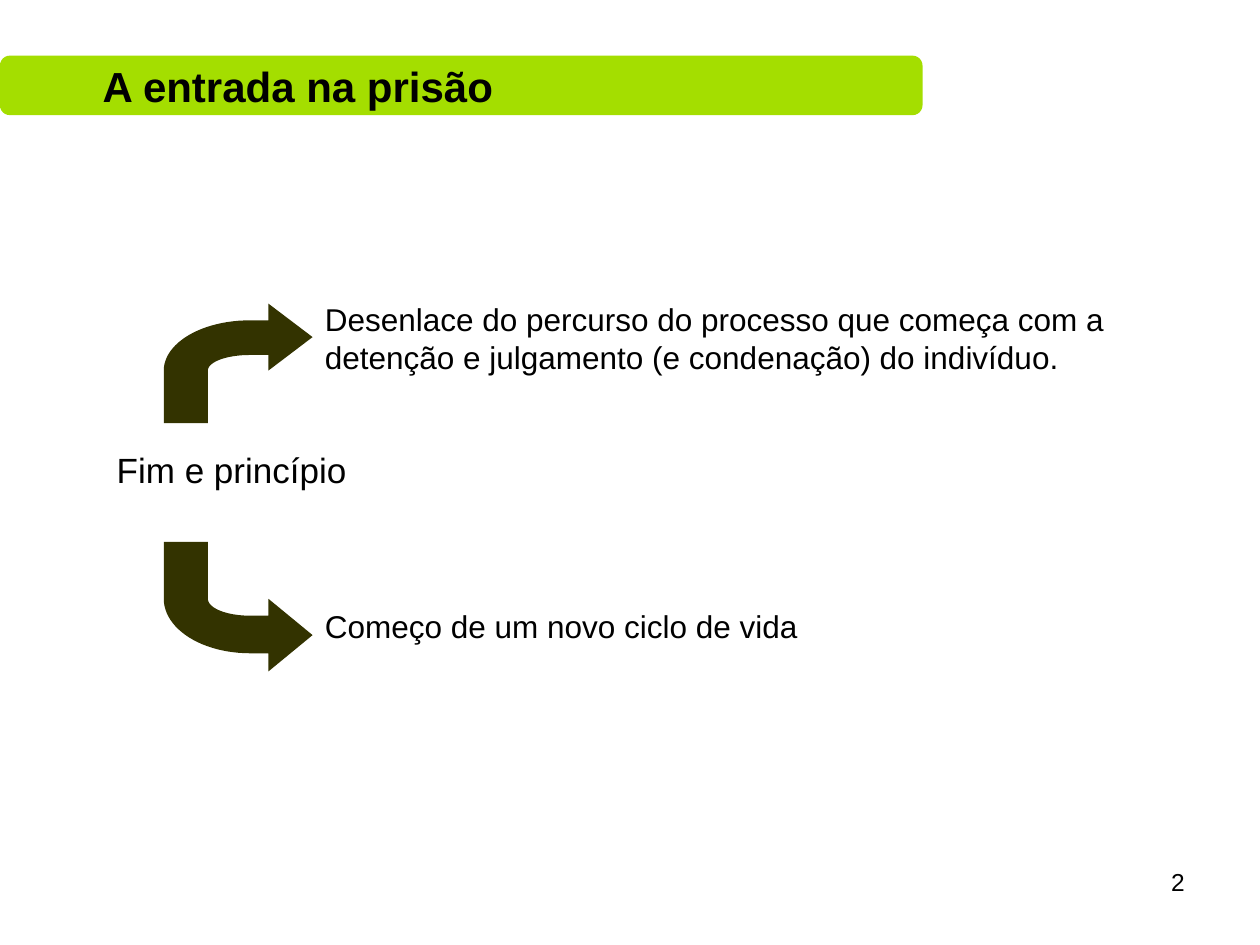
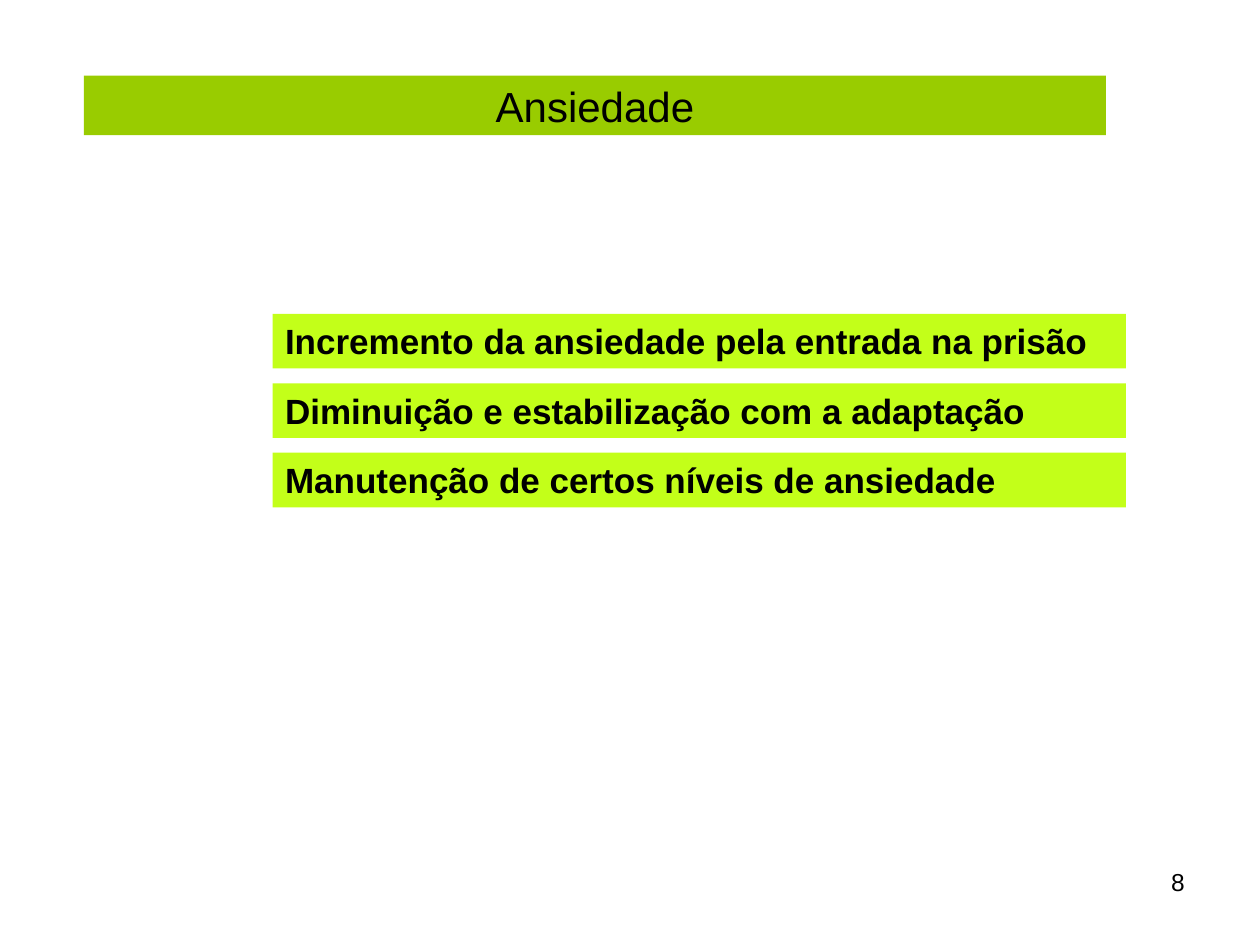
"""Build two slides about entering prison and the anxiety it brings."""
from math import cos, pi, sin

from pptx import Presentation
from pptx.dml.color import RGBColor
from pptx.enum.shapes import MSO_SHAPE as Shape
from pptx.enum.text import MSO_ANCHOR as Anchor, PP_ALIGN as Align
from pptx.util import Pt

FONT, INK, ARROW = "Arial", "000000", "333300"
LIME, GREEN, PALE = "A4DE00", "99CC00", "C3FF19"
TITLE_SIZE, TITLE_HEIGHT, INSET = 24, 34, 7.2

ENTRY = {
    "title": "A entrada na prisão",
    "page": "2",
    "hub": "Fim e princípio",
    "outcomes": [
        ("Desenlace do percurso do processo que começa com a detenção "
         "e julgamento (e condenação) do indivíduo.", (178.6, 168, 476, 50.4)),
        ("Começo de um novo ciclo de vida", (178.6, 343.4, 391, 29)),
    ],
    "arrows": [(241.8, 68.3), (309.6, -74.1)],
}
ANXIETY = {
    "title": "Ansiedade",
    "page": "8",
    "stages": [
        "Incremento da ansiedade pela entrada na prisão",
        "Diminuição e estabilização com a adaptação",
        "Manutenção de certos níveis de ansiedade",
    ],
}


def paint(shape, color):
    shape.shadow.inherit = False
    shape.fill.solid()
    shape.fill.fore_color.rgb = RGBColor.from_string(color)
    shape.line.fill.background()


def write(shape, text, size, bold=False, align=Align.LEFT, anchor=Anchor.TOP, left=INSET):
    frame = shape.text_frame
    frame.word_wrap = True
    frame.vertical_anchor = anchor
    frame.margin_left = Pt(left)
    line = frame.paragraphs[0]
    line.text = text
    line.alignment = align
    line.font.name, line.font.size, line.font.bold = FONT, Pt(size), bold
    line.font.color.rgb = RGBColor.from_string(INK)


def add_label(slide, box, text, size, **style):
    write(slide.shapes.add_textbox(*map(Pt, box)), text, size, **style)


def add_band(slide, box, color, text, size, kind=Shape.RECTANGLE, **style):
    band = slide.shapes.add_shape(kind, *map(Pt, box))
    paint(band, color)
    write(band, text, size, **style)


def add_bent_arrow(slide, foot, rise, left=93.6, width=85, stem=25.2, steps=24):
    """Draw an arrow that leaves its foot vertically and bends right; a negative rise goes down."""
    bend, head = left + 49, left + 59.8
    outer, tip, inner, base = 0.14, 0.28, 0.43, 0.56

    def curve(start, edge):
        angles = [pi / 2 * step / steps for step in range(steps + 1)]
        return [(bend - (bend - start) * sin(a), base - (base - edge) * cos(a)) for a in angles]

    outline = [
        (left + width, tip), (head, 0), (head, outer),
        *curve(left, outer), (left, 1), (left + stem, 1),
        *reversed(curve(left + stem, inner)), (head, inner), (head, base),
    ]
    points = [(Pt(x), Pt(foot - rise * (1 - depth))) for x, depth in outline]
    builder = slide.shapes.build_freeform(*points[0], scale=1.0)
    builder.add_line_segments(points[1:], close=True)
    paint(builder.convert_to_shape(), ARROW)


def new_slide(deck, page):
    slide = deck.slides.add_slide(deck.slide_layouts[6])
    add_label(slide, (516, 492, 168, 37.5), page, 14, align=Align.RIGHT)
    return slide


def build_entry(deck):
    slide = new_slide(deck, ENTRY["page"])
    add_band(slide, (0, 31.8, 527.2, TITLE_HEIGHT), LIME, ENTRY["title"], TITLE_SIZE,
             Shape.ROUNDED_RECTANGLE, bold=True, anchor=Anchor.MIDDLE, left=57)
    add_label(slide, (59.6, 252.6, 147.6, 31), ENTRY["hub"], 20)
    for text, box in ENTRY["outcomes"]:
        add_label(slide, box, text, 18)
    for foot, rise in ENTRY["arrows"]:
        add_bent_arrow(slide, foot, rise)


def build_anxiety(deck):
    slide = new_slide(deck, ANXIETY["page"])
    add_band(slide, (48, 43.2, 584, TITLE_HEIGHT), GREEN, ANXIETY["title"], TITLE_SIZE,
             align=Align.CENTER, anchor=Anchor.MIDDLE)
    top, pitch = 179.3, 39.7
    for row, stage in enumerate(ANXIETY["stages"]):
        add_band(slide, (155.8, top + row * pitch, 487.6, 31.2), PALE, stage, 20, bold=True)


def main():
    deck = Presentation()
    deck.slide_width, deck.slide_height = Pt(720), Pt(540)
    build_entry(deck)
    build_anxiety(deck)
    deck.save("out.pptx")


if __name__ == "__main__":
    main()
